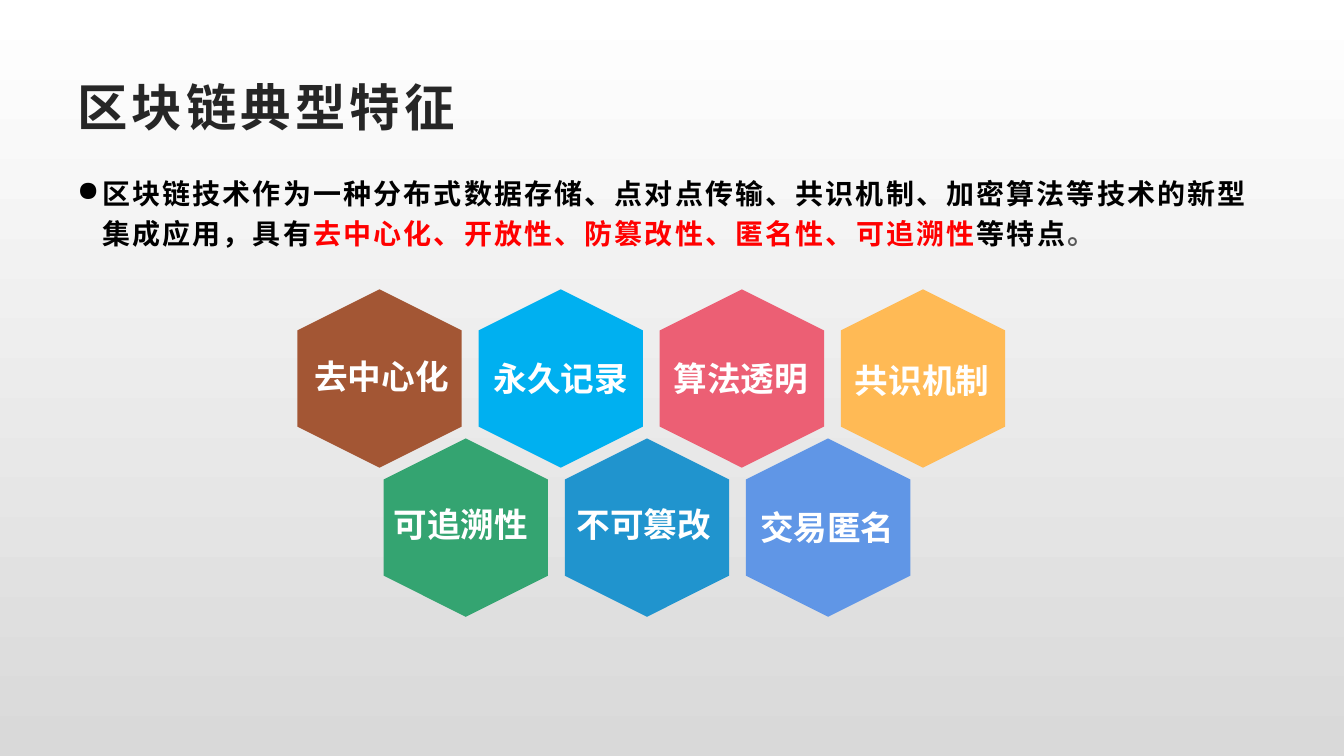
from pptx import Presentation
from pptx.dml.color import RGBColor as Color
from pptx.enum.shapes import MSO_SHAPE as Shape
from pptx.enum.text import MSO_ANCHOR as Anchor, MSO_AUTO_SIZE as AutoSize
from pptx.oxml.ns import qn
from pptx.util import Pt
from lxml.etree import SubElement

COLORS = {
    "top": "FFFFFF", "bottom": "D9D9D9",
    "title": "262626", "black": "000000", "red": "FF0000",
    "gray": "595959", "white": "FFFFFF",
    "brown": "A35634", "sky": "00B0F0", "pink": "EC5F74", "amber": "FFBA55",
    "green": "34A471", "blue": "2094CE", "periwinkle": "6096E6",
}
CJK = "Noto Sans CJK SC"


def color(name):
    return Color.from_string(COLORS[name])


class FeatureSlide:
    """Holds the style and the current page."""

    def __init__(self, deck):
        self.page = deck.slides.add_slide(deck.slide_layouts[6])

    def background(self, first, last):
        fill = self.page.background.fill
        fill.gradient()
        fill.gradient_angle = 270
        for stop, name, position in zip(fill.gradient_stops, (first, last), (0, 1)):
            stop.color.rgb = color(name)
            stop.position = position

    def text(self, left, top, width, height, spans, size, font=CJK, spacing=0):
        """Add a bold text box; spans are (text, colour name) pairs."""
        box = self.page.shapes.add_textbox(Pt(left), Pt(top), Pt(width), Pt(height))
        box.text_frame.word_wrap = True
        para = box.text_frame.paragraphs[0]
        para.font.size, para.font.bold, para.font.name = Pt(size), True, font
        props = para.font._element
        SubElement(props, qn("a:ea"), typeface=CJK)
        if spacing:
            props.set("spc", str(int(spacing * 100)))
        for words, name in spans:
            span = para.add_run()
            span.text = words
            span.font.color.rgb = color(name)
        return box

    def bullet(self, box, indent, line_spacing, space_after):
        para = box.text_frame.paragraphs[0]
        para.line_spacing, para.space_after = line_spacing, Pt(space_after)
        props = para._p.get_or_add_pPr()
        props.set("marL", str(Pt(indent)))
        props.set("indent", str(-Pt(indent)))
        mark = SubElement(props, qn("a:buChar"), char="●")
        props.find(qn("a:defRPr")).addprevious(mark)

    def hexagon(self, left, top, width, height, name):
        shape = self.page.shapes.add_shape(
            Shape.HEXAGON, Pt(left), Pt(top), Pt(width), Pt(height))
        shape.rotation = 90
        shape.shadow.inherit = False
        shape.fill.solid()
        shape.fill.fore_color.rgb = color(name)
        shape.line.fill.background()


def main():
    deck = Presentation()
    deck.slide_width, deck.slide_height = Pt(960), Pt(540)
    slide = FeatureSlide(deck)
    slide.background("top", "bottom")

    # Title
    title = slide.text(48, 48, 864, 55.5, [("区块链典型特征", "title")], 36, "Arial", 3)
    title.text_frame.vertical_anchor = Anchor.MIDDLE

    # Introduction
    intro = slide.text(48, 117.4, 864, 77, [
        ("区块链技术作为一种分布式数据存储、点对点传输、共识机制、加密算法等技术的新型集成应用，具有", "black"),
        ("去中心化、开放性、防篡改性、匿名性、可追溯性", "red"),
        ("等特点", "black"),
        ("。", "gray"),
    ], 20, spacing=1.5)
    slide.bullet(intro, 18, 1.2, 10)

    # Honeycomb rows: left, top, then label, colour and label offset per cell
    rows = [
        (207.4, 211.7, [("去中心化", "brown", 10, 39), ("永久记录", "sky", 8.6, 40.3),
                        ("算法透明", "pink", 8, 40.3), ("共识机制", "amber", 8, 41.8)]),
        (269, 318.2, [("可追溯性", "green", 5, 38.2), ("不可篡改", "blue", 6.5, 38.2),
                      ("交易匿名", "periwinkle", 8, 40.3)]),
    ]
    pitch = 129.4
    for start, top, cells in rows:
        for column, (label, name, right, down) in enumerate(cells):
            left = start + column * pitch
            slide.hexagon(left, top, 127.4, 117.4, name)
            box = slide.text(left + right, top + down, 130.3, 36, [(label, "white")], 24)
            box.text_frame.auto_size = AutoSize.SHAPE_TO_FIT_TEXT

    deck.save("out.pptx")


if __name__ == "__main__":
    main()
